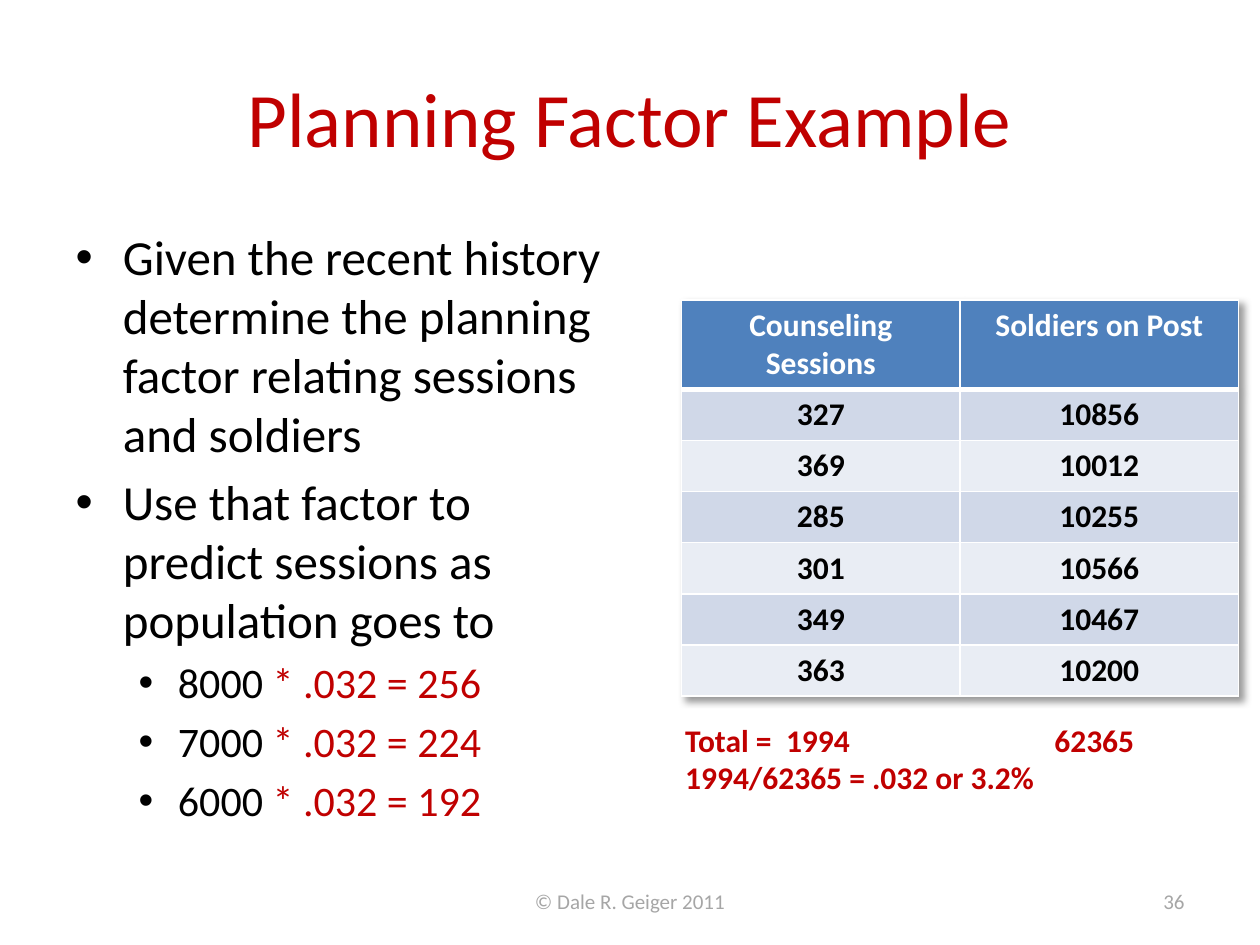
from dataclasses import dataclass
from typing import Any, NamedTuple

from lxml.etree import SubElement
from pptx import Presentation
from pptx.dml.color import RGBColor
from pptx.enum.text import MSO_ANCHOR, MSO_AUTO_SIZE, PP_ALIGN
from pptx.oxml import parse_xml
from pptx.oxml.ns import nsdecls, qn
from pptx.util import Inches, Pt


@dataclass(frozen=True)
class Theme:
    font: str = "Calibri"
    red: str = "C00000"
    black: str = "000000"
    white: str = "FFFFFF"
    gray: str = "A6A6A6"
    head: str = "4F81BD"
    bands: tuple[str, str] = ("D0D8E8", "E9EDF4")
    title: int = 44
    main: int = 28
    sub: int = 24
    cell: int = 18
    foot: int = 12


class Box(NamedTuple):
    left: float
    top: float
    width: float
    height: float

    def place(self) -> list[int]:
        sides = (WIDE, HIGH, WIDE, HIGH)
        return [round(side * share / 100) for side, share in zip(sides, self)]


class Label(NamedTuple):
    box: Box
    text: str
    align: Any


class Case(NamedTuple):
    people: str
    result: str


WIDE, HIGH = Inches(10), Inches(7.5)
LOOK = Theme()
TITLE = Box(5, 4, 90, 16.67)
BODY = Box(5, 23.33, 44.2, 66)
TABLE = Box(54.1, 31.73, 44.2, 41.73)
TOTAL = Box(53.4, 75.6, 38.4, 9.47)
HEAD_ROW = Inches(0.7)
POINTS = [
    "Given the recent history determine the planning factor relating sessions and soldiers",
    "Use that factor to predict sessions as population goes to",
]
CASES = [
    Case("8000 ", "* .032 = 256"),
    Case("7000 ", "* .032 = 224"),
    Case("6000 ", "* .032 = 192"),
]
ROWS = [
    ("Counseling Sessions", "Soldiers on Post"),
    ("327", "10856"),
    ("369", "10012"),
    ("285", "10255"),
    ("301", "10566"),
    ("349", "10467"),
    ("363", "10200"),
]
LABELS = [
    Label(Box(34.17, 92.67, 31.67, 5.33), "© Dale R. Geiger 2011", PP_ALIGN.CENTER),
    Label(Box(71.67, 92.67, 23.33, 5.33), "36", PP_ALIGN.RIGHT),
]


def write(para: Any, text: str, *, size: int, color: str,
          bold: bool = False, align: Any = None) -> None:
    run = para.add_run()
    run.text = text
    run.font.name = LOOK.font
    run.font.size = Pt(size)
    run.font.bold = bold
    run.font.color.rgb = RGBColor.from_string(color)
    if align is not None:
        para.alignment = align


def move(shape: Any, box: Box) -> None:
    shape.left, shape.top, shape.width, shape.height = box.place()


def next_para(frame: Any, first: bool) -> Any:
    return frame.paragraphs[0] if first else frame.add_paragraph()


def add_box(slide: Any, box: Box) -> Any:
    frame = slide.shapes.add_textbox(*box.place()).text_frame
    frame.word_wrap = True
    return frame


def fill_body(shape: Any) -> None:
    move(shape, BODY)
    frame = shape.text_frame
    frame.auto_size = MSO_AUTO_SIZE.NONE
    for spot, text in enumerate(POINTS):
        write(next_para(frame, spot == 0), text, size=LOOK.main, color=LOOK.black)
    for case in CASES:
        para = frame.add_paragraph()
        para.level = 1
        write(para, case.people, size=LOOK.sub, color=LOOK.black)
        write(para, case.result, size=LOOK.sub, color=LOOK.red)
        props = para._p.get_or_add_pPr()
        SubElement(props, qn("a:buFont"), typeface="Arial")
        SubElement(props, qn("a:buChar"), char="•")


def edge(cell: Any, side: str, width: float) -> None:
    props = cell._tc.get_or_add_tcPr()
    line = SubElement(props, qn(f"a:ln{side}"), w=str(Pt(width)))
    paint = SubElement(line, qn("a:solidFill"))
    SubElement(paint, qn("a:srgbClr"), val=LOOK.white)


def add_grid(slide: Any) -> None:
    table = slide.shapes.add_table(len(ROWS), len(ROWS[0]), *TABLE.place()).table
    table._tbl.tblPr.insert(0, parse_xml(
        f'<a:effectLst {nsdecls("a")}><a:outerShdw blurRad="50800" dist="38100" '
        'dir="2700000" algn="tl" rotWithShape="0"><a:srgbClr val="000000">'
        '<a:alpha val="40000"/></a:srgbClr></a:outerShdw></a:effectLst>'))
    rest = (TABLE.place()[3] - HEAD_ROW) // (len(ROWS) - 1)
    for row, texts in enumerate(ROWS):
        head = row == 0
        table.rows[row].height = HEAD_ROW if head else rest
        for col, text in enumerate(texts):
            cell = table.cell(row, col)
            for side in "LRTB":
                thick = (head and side == "B") or (row == 1 and side == "T")
                edge(cell, side, 3 if thick else 1)
            cell.fill.solid()
            shade = LOOK.head if head else LOOK.bands[(row - 1) % 2]
            cell.fill.fore_color.rgb = RGBColor.from_string(shade)
            cell.margin_left = cell.margin_right = Inches(0.12)
            write(cell.text_frame.paragraphs[0], text, size=LOOK.cell, bold=True,
                  color=LOOK.white if head else LOOK.black, align=PP_ALIGN.CENTER)


def add_total(slide: Any) -> None:
    frame = add_box(slide, TOTAL)
    lines = ["Total =\t1994\t62365", "1994/62365 = .032 or 3.2%"]
    for spot, text in enumerate(lines):
        write(next_para(frame, spot == 0), text, size=LOOK.cell,
              color=LOOK.red, bold=True)
    stops = SubElement(frame.paragraphs[0]._p.get_or_add_pPr(), qn("a:tabLst"))
    for stop in (0.8, 2.93):
        SubElement(stops, qn("a:tab"), pos=str(Inches(stop)), algn="l")


def main() -> None:
    deck = Presentation()
    deck.slide_width, deck.slide_height = WIDE, HIGH
    slide = deck.slides.add_slide(deck.slide_layouts[1])
    title = slide.shapes.title
    move(title, TITLE)
    write(title.text_frame.paragraphs[0], "Planning Factor Example",
          size=LOOK.title, color=LOOK.red, align=PP_ALIGN.CENTER)
    fill_body(slide.placeholders[1])
    add_grid(slide)
    add_total(slide)
    for label in LABELS:
        frame = add_box(slide, label.box)
        frame.vertical_anchor = MSO_ANCHOR.MIDDLE
        write(frame.paragraphs[0], label.text, size=LOOK.foot,
              color=LOOK.gray, align=label.align)
    deck.save("out.pptx")


if __name__ == "__main__":
    main()
